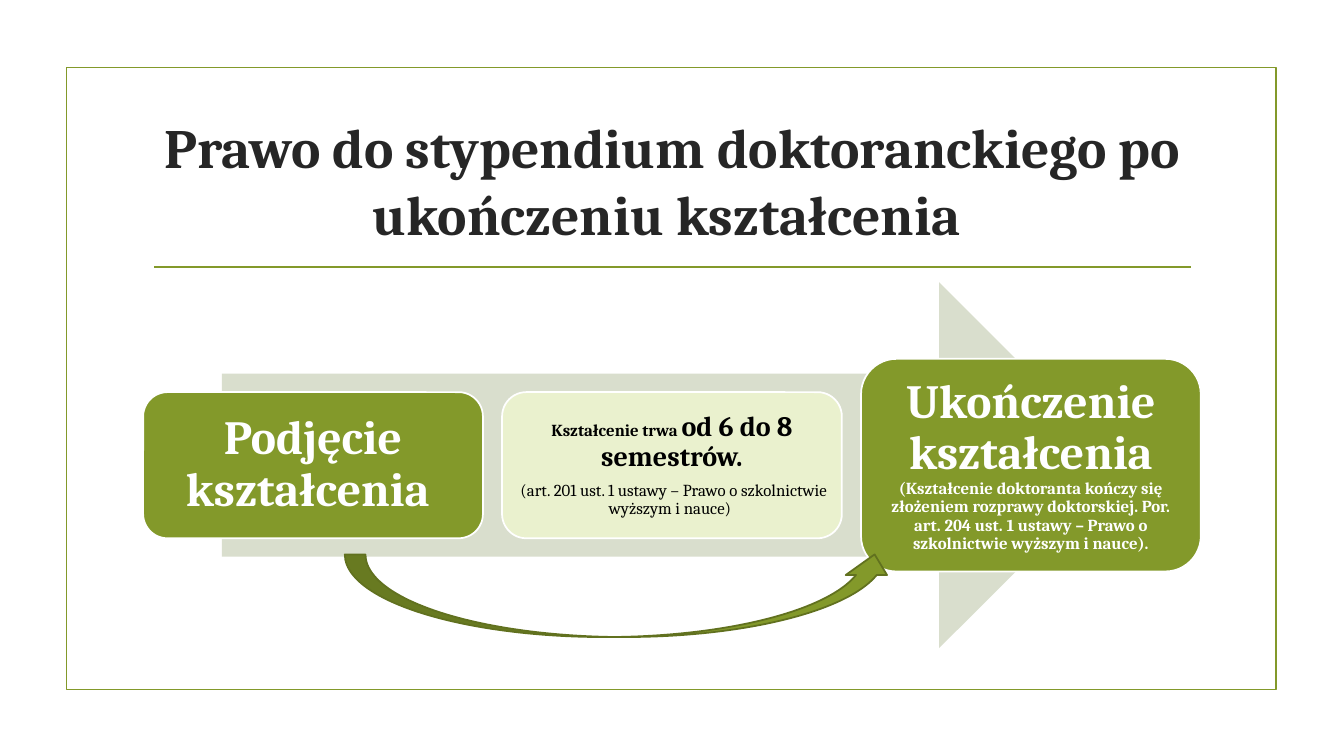
from pptx import Presentation
from pptx.dml.color import RGBColor
from pptx.enum.shapes import MSO_CONNECTOR, MSO_SHAPE
from pptx.enum.text import MSO_ANCHOR, PP_ALIGN
from pptx.util import Inches, Pt
from lxml import etree

RECTANGLE = MSO_SHAPE.RECTANGLE
ROUNDED = MSO_SHAPE.ROUNDED_RECTANGLE
RIGHT_ARROW = MSO_SHAPE.RIGHT_ARROW
CURVED_ARROW = MSO_SHAPE.CURVED_UP_ARROW
STRAIGHT = MSO_CONNECTOR.STRAIGHT
MIDDLE = MSO_ANCHOR.MIDDLE
CENTER = PP_ALIGN.CENTER

GREEN = RGBColor(0x83, 0x99, 0x2A)
DARK_GREEN = RGBColor(0x61, 0x71, 0x1F)
PALE_GREEN = RGBColor(0xEA, 0xF1, 0xCE)
GREY_GREEN = RGBColor(0xD9, 0xDE, 0xCD)
INK = RGBColor(0x26, 0x26, 0x26)
BLACK = RGBColor(0, 0, 0)
WHITE = RGBColor(0xFF, 0xFF, 0xFF)

FONT = "Cambria"
LINE_WIDTH = Pt(1.25)
LEFT = 1.42
STEP_WIDTH = 3.37
STEP_PITCH = 3.56
STEP_MIDDLE = 4.615


def add_shape(kind, left, top, width, height, fill=None, line=None):
    shape = page.shapes.add_shape(
        kind, Inches(left), Inches(top), Inches(width), Inches(height))
    shape.shadow.inherit = False
    if fill is None:
        shape.fill.background()
    else:
        shape.fill.solid()
        shape.fill.fore_color.rgb = fill
    if line is None:
        shape.line.fill.background()
    else:
        shape.line.color.rgb = line
        shape.line.width = LINE_WIDTH
    return shape


def write(box, paragraphs, color, margin, spacing=1.0):
    frame = box.text_frame
    frame.word_wrap = True
    frame.vertical_anchor = MIDDLE
    frame.margin_left = frame.margin_right = Inches(margin)
    frame.margin_top = frame.margin_bottom = Inches(margin)
    for number, spans in enumerate(paragraphs):
        para = frame.add_paragraph() if number else frame.paragraphs[0]
        para.alignment = CENTER
        para.line_spacing = spacing
        if number < len(paragraphs) - 1:
            para.space_after = Pt(7)
        for text, size, bold in spans:
            span = para.add_run()
            span.text = text
            span.font.name = FONT
            span.font.size = Pt(size)
            span.font.bold = bold
            span.font.color.rgb = color


deck = Presentation()
deck.slide_width = Inches(13.33)
deck.slide_height = Inches(7.5)
page = deck.slides.add_slide(deck.slide_layouts[6])

add_shape(RECTANGLE, 0.66, 0.67, 12, 6.17, line=GREEN)

rule = page.shapes.add_connector(
    STRAIGHT, Inches(1.53), Inches(2.65), Inches(11.81), Inches(2.65))
rule.line.color.rgb = GREEN
rule.line.width = LINE_WIDTH
etree.SubElement(
    rule._element.spPr,
    "{http://schemas.openxmlformats.org/drawingml/2006/main}effectLst")

title = page.shapes.add_textbox(
    Inches(LEFT), Inches(1.07), Inches(10.5), Inches(1.43))
write(title, [[("Prawo do stypendium doktoranckiego po ukończeniu kształcenia ",
                39.6, True)]], INK, 0.05)

add_shape(RIGHT_ARROW, 2.2, 2.8, 8.93, 3.63, fill=GREY_GREEN)

steps = [
    (1.45, GREEN, WHITE, 0.14, [[("Podjęcie kształcenia ", 34, True)]]),
    (1.45, PALE_GREEN, BLACK, 0.05, [
        [("Kształcenie trwa ", 12, True), ("od 6 do 8 semestrów.", 20, True)],
        [(" (art. 201 ust. 1 ustawy – Prawo o szkolnictwie wyższym i nauce) ",
          12, False)],
    ]),
    (2.11, GREEN, WHITE, 0.14, [[
        ("Ukończenie kształcenia ", 34, True),
        ("(Kształcenie doktoranta kończy się złożeniem rozprawy doktorskiej. "
         "Por. art. 204 ust. 1 ustawy – Prawo o szkolnictwie wyższym i nauce).",
         12, True),
    ]]),
]
for column, (height, fill, color, margin, paragraphs) in enumerate(steps):
    step = add_shape(ROUNDED, LEFT + column * STEP_PITCH,
                     STEP_MIDDLE - height / 2, STEP_WIDTH, height, fill, WHITE)
    write(step, paragraphs, color, margin, 0.9)

add_shape(CURVED_ARROW, 3.42, 5.5, 5.46, 0.82, GREEN, DARK_GREEN)

deck.save("out.pptx")
